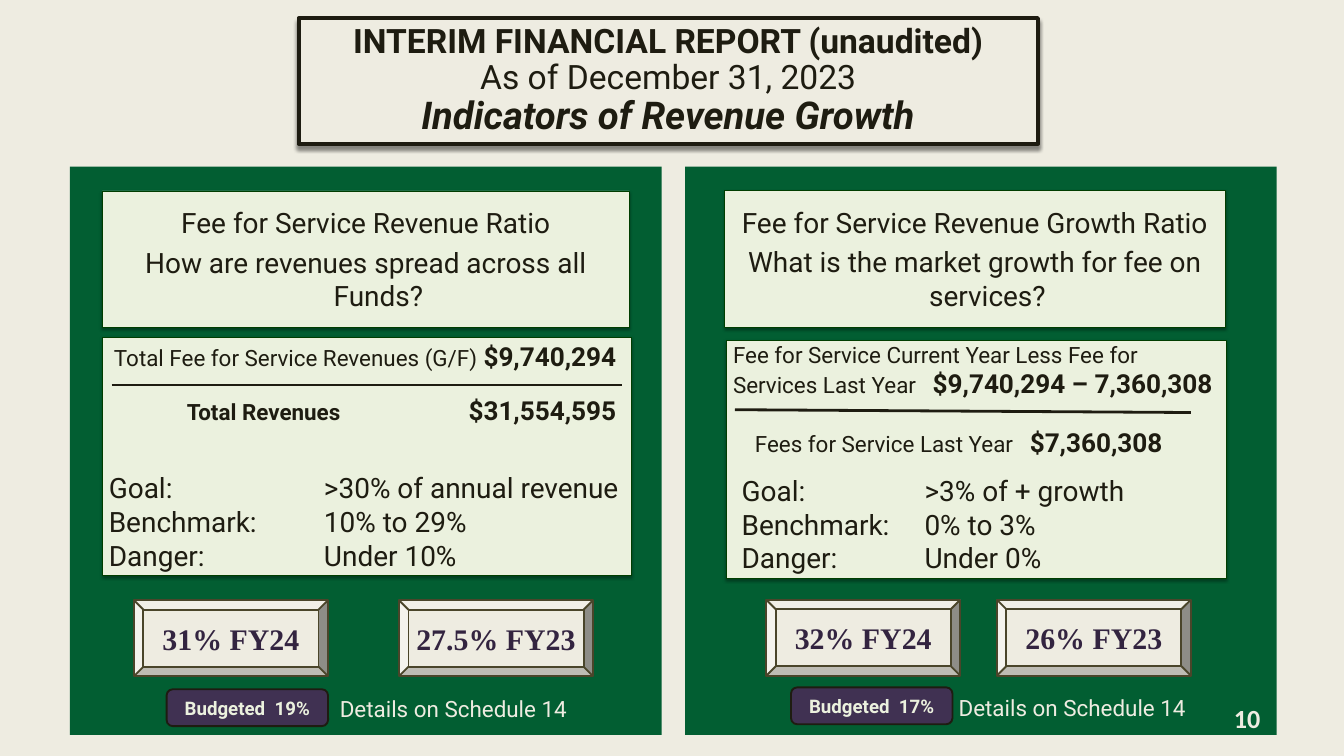
import pptx
import pptx.dml.color
import pptx.enum.shapes
import pptx.enum.text
import pptx.oxml.ns
import pptx.util
from lxml import etree

INK = "1E1C11"
CREAM = "EEECE1"
MINT = "EBF1DE"
SHAPES = pptx.enum.shapes.MSO_SHAPE
ALIGN = pptx.enum.text.PP_ALIGN
ANCHOR = pptx.enum.text.MSO_ANCHOR
Pt = pptx.util.Pt


def rgb(color):
    return pptx.dml.color.RGBColor.from_string(color)


def child(parent, tag, **attributes):
    element = etree.SubElement(parent, pptx.oxml.ns.qn(tag))
    for name, value in attributes.items():
        element.set(name, str(value))
    return element


def add_shadow(shape, opacity, blur, distance):
    effects = shape._element.spPr.find(pptx.oxml.ns.qn("a:effectLst"))
    shadow = child(effects, "a:outerShdw", blurRad=Pt(blur), dist=Pt(distance),
                   dir=5400000, algn="ctr", rotWithShape=0)
    color = child(shadow, "a:srgbClr", val="000000")
    child(color, "a:alpha", val=opacity * 1000)


def add_box(page, kind, place, fill, line=None, width=0.75):
    box = page.shapes.add_shape(kind, *map(Pt, place))
    box.shadow.inherit = False
    box.fill.solid()
    box.fill.fore_color.rgb = rgb(fill)
    if line:
        box.line.color.rgb = rgb(line)
        box.line.width = Pt(width)
    else:
        box.line.fill.background()
    frame = box.text_frame
    frame.word_wrap = True
    frame.vertical_anchor = ANCHOR.MIDDLE
    return box


def add_text_area(page, place):
    frame = page.shapes.add_textbox(*map(Pt, place)).text_frame
    frame.word_wrap = True
    return frame


def add_para(frame, spans, align=ALIGN.LEFT, color=INK, font="Roboto", before=0):
    para = frame.paragraphs[0]
    if para.runs:
        para = frame.add_paragraph()
    para.alignment = align
    para.space_before = Pt(before)
    for text, size, bold in spans:
        span = para.add_run()
        span.text = text
        span.font.name = font
        span.font.size = Pt(size)
        span.font.bold = bold
        span.font.color.rgb = rgb(color)
    return para


def set_tabs(para, *stops):
    tabs = child(para._p.get_or_add_pPr(), "a:tabLst")
    for position, side in stops:
        child(tabs, "a:tab", pos=Pt(position), algn=side)


def add_rule(page, *ends):
    rule = page.shapes.add_connector(
        pptx.enum.shapes.MSO_CONNECTOR.STRAIGHT, *map(Pt, ends))
    rule.line.color.rgb = rgb(INK)
    rule.line.width = Pt(3)
    child(rule._element.spPr, "a:effectLst")


def add_title(page):
    title = add_box(page, SHAPES.RECTANGLE, (320, 19.5, 792, 134.5), CREAM, INK, 4.5)
    add_shadow(title, 43, 4, 4)
    frame = title.text_frame
    frame.margin_left = frame.margin_right = frame.margin_top = frame.margin_bottom = 0
    for text, size, bold, italic in (
            ("INTERIM FINANCIAL REPORT (unaudited)", 36, True, False),
            ("As of December 31, 2023", 36, False, False),
            ("Indicators of Revenue Growth", 41, True, True)):
        para = add_para(frame, [(text, size, bold)], ALIGN.CENTER)
        para.line_spacing = 0.9
        para.runs[0].font.italic = italic


def add_card(page, place):
    card = add_box(page, SHAPES.RECTANGLE, place, MINT, "003E00")
    add_shadow(card, 35, 3.1, 1.8)
    return card.text_frame


def add_question(page, place, lines):
    frame = add_card(page, place)
    for line in lines:
        para = add_para(frame, [(line, 30, False)], ALIGN.CENTER, before=6)
        properties = para._p.get_or_add_pPr()
        properties.set("marL", str(Pt(27)))
        properties.set("indent", str(-Pt(27)))


def add_targets(page, place, tab, targets):
    frame = add_text_area(page, place)
    for label, target in zip(("Goal:", "Benchmark:", "Danger:"), targets):
        para = add_para(frame, [(f"{label}\t{target}", 30, False)])
        set_tabs(para, (tab, "l"))


def add_result(page, left, top, text):
    button = add_box(page, SHAPES.BEVEL, (left, top, 208, 81.5), CREAM, "4A452A", 2)
    add_para(button.text_frame, [(text, 32, True)], ALIGN.CENTER, "332440",
             "Times New Roman")


def add_budget(page, left, top, text):
    badge = add_box(page, SHAPES.ROUNDED_RECTANGLE, (left, top, 173, 39.5),
                    "403152", INK, 2)
    add_para(badge.text_frame, [(text, 20, True)], ALIGN.CENTER, MINT)


def add_details(page, left, top):
    frame = add_text_area(page, (left, top, 277, 36))
    add_para(frame, [("Details on Schedule 14", 24, False)], color=CREAM)


def add_revenue_ratio(page):
    frame = add_card(page, (110, 361.5, 566, 255))
    frame.vertical_anchor = ANCHOR.TOP
    top = add_para(frame, [("\tTotal Fee for Service Revenues (G/F)\t", 24, False),
                           ("$9,740,294", 28, True)], before=5)
    set_tabs(top, (5, "l"), (543, "r"))
    bottom = add_para(frame, [("\tTotal Revenues\t", 24, True),
                              ("$31,554,595", 28, True)], before=24)
    set_tabs(bottom, (83, "l"), (543, "r"))
    add_rule(page, 119.5, 412.5, 666, 412.5)


def add_growth_ratio(page):
    add_card(page, (778, 364.5, 536, 255))
    frame = add_text_area(page, (771, 361.5, 543, 133))
    frame.margin_left = Pt(14.4)
    top = add_para(frame, [
        ("Fee for Service Current Year Less Fee for Services Last Year\t", 24, False),
        ("$9,740,294 – 7,360,308", 28, True)])
    set_tabs(top, (214, "l"))
    bottom = add_para(frame, [("\tFees for Service Last Year\t", 24, False),
                              ("$7,360,308", 28, True)], before=29)
    set_tabs(bottom, (23.5, "l"), (318, "l"))
    add_rule(page, 787.5, 439, 1276, 442)


def add_page_number(page):
    frame = add_text_area(page, (1320.5, 753, 30, 34))
    frame.margin_left = frame.margin_right = frame.margin_top = frame.margin_bottom = 0
    add_para(frame, [("10", 28, True)], ALIGN.RIGHT, CREAM, "Calibri")


def main():
    deck = pptx.Presentation()
    deck.slide_width, deck.slide_height = Pt(1440), Pt(810)
    page = deck.slides.add_slide(deck.slide_layouts[6])
    page.background.fill.solid()
    page.background.fill.fore_color.rgb = rgb(CREAM)

    for left in (75, 734):
        add_box(page, SHAPES.RECTANGLE, (left, 178.5, 634, 609), "025E32")
    add_title(page)

    add_question(page, (109.5, 204.5, 565, 146),
                 ("Fee for Service Revenue Ratio",
                  "How are revenues spread across all Funds?"))
    add_revenue_ratio(page)
    add_targets(page, (109.5, 501, 565, 117), 230.5,
                (">30% of annual revenue", "10% to 29%", "Under 10%"))
    add_result(page, 143.5, 643, "31% FY24")
    add_result(page, 427.5, 643, "27.5% FY23")
    add_budget(page, 178.5, 738.5, "Budgeted  19%")
    add_details(page, 357, 741.5)

    add_question(page, (776, 204, 537, 147),
                 ("Fee for Service Revenue Growth Ratio",
                  "What is the market growth for fee on services?"))
    add_growth_ratio(page)
    add_targets(page, (787.5, 504, 508, 117), 196,
                (">3% of + growth", "0% to 3%", "Under 0%"))
    add_result(page, 821, 642.5, "32% FY24")
    add_result(page, 1068, 642.5, "26% FY23")
    add_budget(page, 847.5, 736.5, "Budgeted  17%")
    add_details(page, 1020, 740)

    add_page_number(page)
    deck.save("out.pptx")


if __name__ == "__main__":
    main()
